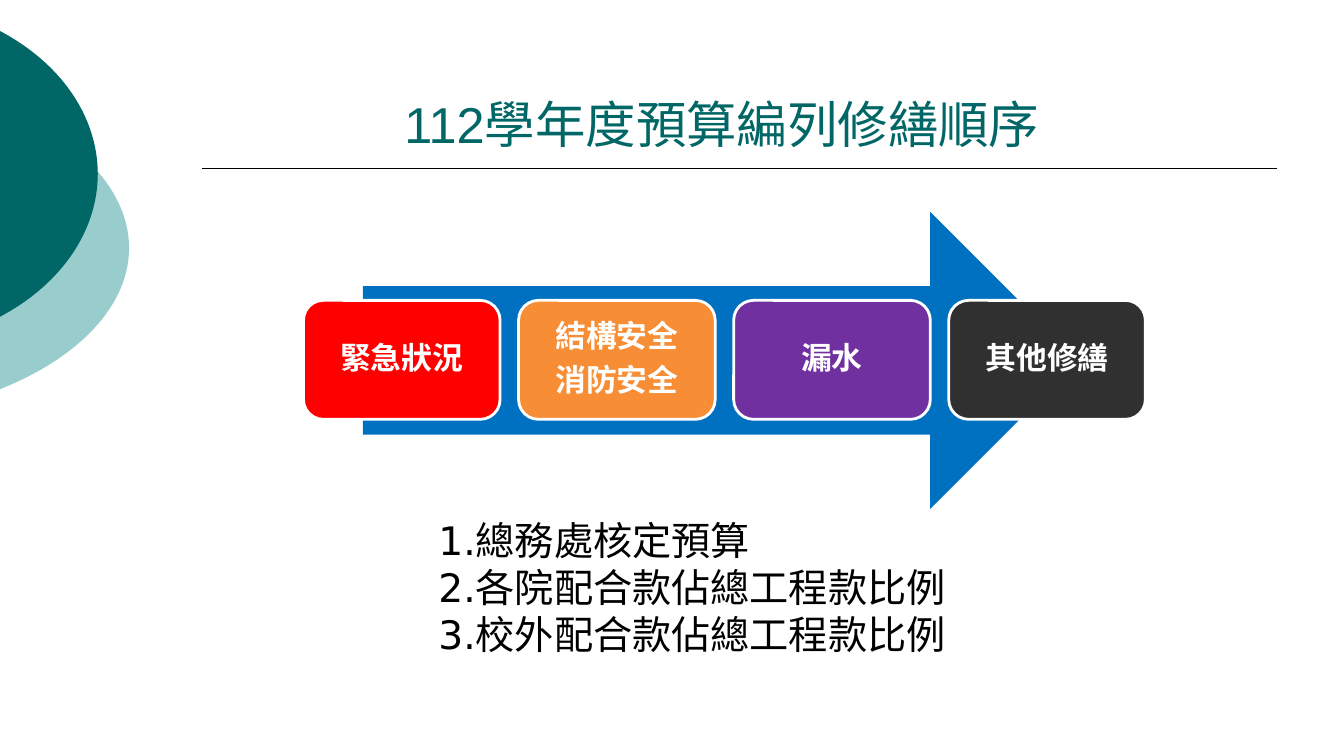
from lxml import etree
from pptx import Presentation
from pptx.dml.color import RGBColor
from pptx.enum.shapes import MSO_CONNECTOR, MSO_SHAPE
from pptx.enum.text import MSO_ANCHOR, MSO_AUTO_SIZE, PP_ALIGN
from pptx.oxml.ns import qn
from pptx.util import Inches, Pt

TITLE = "112學年度預算編列修繕順序"
STEPS = [
    ("緊急狀況", "FF0000"),
    ("結構安全\n消防安全", "F78D35"),
    ("漏水", "7030A0"),
    ("其他修繕", "303030"),
]
CRITERIA = [
    "1.總務處核定預算",
    "2.各院配合款佔總工程款比例",
    "3.校外配合款佔總工程款比例",
]
# Discs cut by the left edge: fill, (left, top, width, height)
DISCS = [
    ("99CCCC", (-4.72, 0.75, 6, 3.42)),
    ("006666", (-3.54, 0, 4.51, 3.45)),
]
FIRST_LEFT, LAST_LEFT, STEP_TOP = 3.01, 9.41, 2.98
STEP_W, STEP_H = 1.95, 1.18


def color(value):
    return RGBColor.from_string(value)


def add_block(s, kind, box, fill, line=None):
    shape = s.shapes.add_shape(kind, *map(Inches, box))
    shape.shadow.inherit = False
    shape.fill.solid()
    shape.fill.fore_color.rgb = color(fill)
    if line:
        shape.line.color.rgb = color(line)
        shape.line.width = Pt(2)
    else:
        shape.line.fill.background()
    return shape


def write(shape, text, size, font, hue, align, bold=False):
    tf = shape.text_frame
    tf.word_wrap = True
    tf.text = text
    for p in tf.paragraphs:
        p.alignment = align
        for r in p.runs:
            r.font.size, r.font.name, r.font.bold = Pt(size), font, bold
            r.font.color.rgb = color(hue)
            # East Asian characters take the same typeface
            ea = etree.SubElement(r.font._element, qn("a:ea"))
            ea.set("typeface", font)
    return tf


def add_title(s):
    rule = s.shapes.add_connector(MSO_CONNECTOR.STRAIGHT, Inches(2),
                                  Inches(1.67), Inches(12.67), Inches(1.67))
    rule.line.color.rgb = color("000000")
    rule.line.width = Pt(1)
    etree.SubElement(rule._element.spPr, qn("a:effectLst"))
    box = s.shapes.add_textbox(*map(Inches, (3.16, 0.91, 8, 0.66)))
    tf = write(box, TITLE, 36, "Arial", "006666", PP_ALIGN.CENTER)
    tf.vertical_anchor = MSO_ANCHOR.BOTTOM


def add_steps(s):
    add_block(s, MSO_SHAPE.RIGHT_ARROW, (3.6, 2.1, 7.1, 2.95), "0070C0")
    pitch = (LAST_LEFT - FIRST_LEFT) / (len(STEPS) - 1)
    for i, (label, fill) in enumerate(STEPS):
        step = add_block(s, MSO_SHAPE.ROUNDED_RECTANGLE,
                         (FIRST_LEFT + i * pitch, STEP_TOP, STEP_W, STEP_H),
                         fill, "FFFFFF")
        tf = write(step, label, 22, "Noto Sans CJK SC", "FFFFFF",
                   PP_ALIGN.CENTER, bold=True)
        tf.vertical_anchor = MSO_ANCHOR.MIDDLE
        for p in tf.paragraphs:
            p.line_spacing = 0.9
        for p in tf.paragraphs[:-1]:
            p.space_after = Pt(7.7)


def add_criteria(s):
    box = s.shapes.add_textbox(*map(Inches, (4.25, 5.07, 5.38, 1.51)))
    tf = write(box, "\n".join(CRITERIA), 28, "DejaVu Sans", "000000",
               PP_ALIGN.LEFT)
    tf.auto_size = MSO_AUTO_SIZE.SHAPE_TO_FIT_TEXT


def main():
    prs = Presentation()
    prs.slide_width, prs.slide_height = Inches(13.33), Inches(7.5)
    s = prs.slides.add_slide(prs.slide_layouts[6])
    for fill, box in DISCS:
        add_block(s, MSO_SHAPE.OVAL, box, fill)
    add_title(s)
    add_steps(s)
    add_criteria(s)
    prs.save("out.pptx")


if __name__ == "__main__":
    main()
